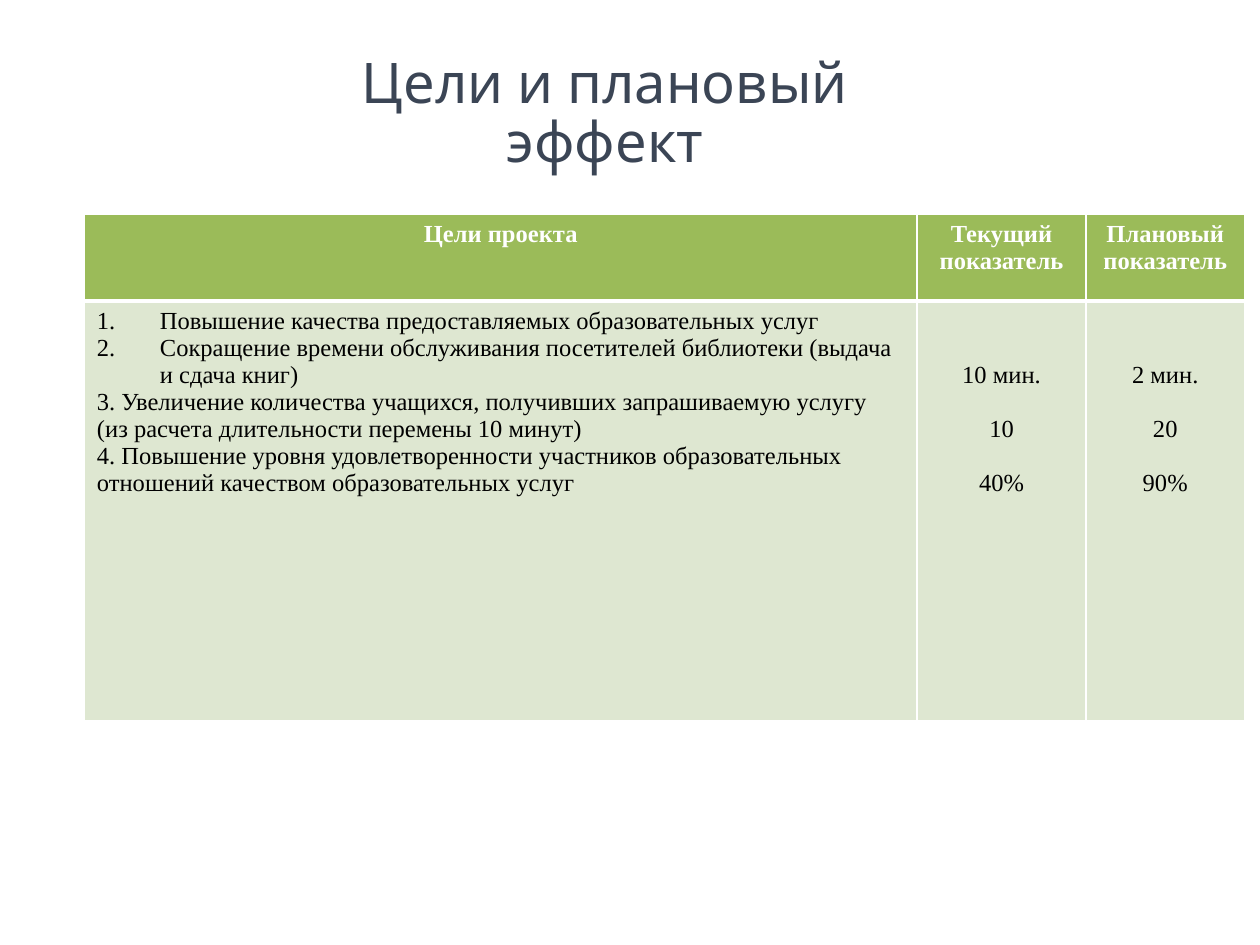
from lxml.etree import SubElement
from pptx import Presentation
from pptx.dml.color import RGBColor
from pptx.enum.text import MSO_ANCHOR, PP_ALIGN as AL
from pptx.oxml.ns import qn
from pptx.util import Cm, Pt

SERIF = "Times New Roman"
HEADERS = ["Цели проекта", "Текущий показатель", "Плановый показатель"]
NUMBERED = [
    "Повышение качества предоставляемых образовательных услуг",
    "Сокращение времени обслуживания посетителей библиотеки (выдача и сдача книг)",
]
GOALS = [
    "3. Увеличение количества учащихся, получивших запрашиваемую услугу "
    "(из расчета длительности перемены 10 минут)",
    "4. Повышение уровня удовлетворенности участников образовательных "
    "отношений качеством образовательных услуг",
]
INDICATORS = [["10 мин.", "10", "40%"], ["2 мин.", "20", "90%"]]
COLUMNS = [16.79, 3.4, 3.2]
ROWS = [1.75, 8.46]


def rgb(value):
    return RGBColor.from_string(value)


def add_text(tf, text, size=14, font=SERIF, color="000000", bold=False,
             align=AL.LEFT, before=0, spacing=None, numbered=False):
    p = tf.paragraphs[0]
    if p.runs:
        p = tf.add_paragraph()
    p.alignment = align
    if before:
        p.space_before = Pt(before)
    if spacing:
        p.line_spacing = spacing
    if numbered:
        pPr = p._p.get_or_add_pPr()
        pPr.set("marL", str(Cm(1.27)))
        pPr.set("indent", str(-Cm(1.27)))
        SubElement(pPr, qn("a:buFont"), typeface="+mj-lt")
        SubElement(pPr, qn("a:buAutoNum"), type="arabicPeriod")
    r = p.add_run()
    r.text = text
    r.font.size, r.font.name, r.font.bold = Pt(size), font, bold
    r.font.color.rgb = rgb(color)


def style_cell(cell, fill, top=1, bottom=1):
    tcPr = cell._tc.get_or_add_tcPr()
    for tag, width in (("lnL", 1), ("lnR", 1), ("lnT", top), ("lnB", bottom)):
        ln = SubElement(tcPr, qn(f"a:{tag}"), w=str(Pt(width)))
        SubElement(SubElement(ln, qn("a:solidFill")), qn("a:srgbClr"), val="FFFFFF")
    cell.fill.solid()
    cell.fill.fore_color.rgb = rgb(fill)


def add_title(s, text):
    tf = s.shapes.add_textbox(Cm(5.1), Cm(0.91), Cm(14.2), Cm(1.63)).text_frame
    tf.word_wrap = True
    tf.vertical_anchor = MSO_ANCHOR.TOP
    tf.margin_top = Cm(0.23)
    add_text(tf, text, size=32, font="League Spartan", color="3B4555",
             align=AL.CENTER, spacing=0.88)


def add_goals_table(s):
    table = s.shapes.add_table(len(ROWS), len(COLUMNS), Cm(1.7), Cm(4.32),
                               Cm(sum(COLUMNS)), Cm(sum(ROWS))).table
    for column, width in zip(table.columns, COLUMNS):
        column.width = Cm(width)
    for row, height in zip(table.rows, ROWS):
        row.height = Cm(height)
    for i, header in enumerate(HEADERS):
        style_cell(table.cell(0, i), "9BBB59", bottom=3)
        style_cell(table.cell(1, i), "DEE7D1", top=3)
        add_text(table.cell(0, i).text_frame, header, color="FFFFFF",
                 bold=True, align=AL.CENTER)
    goals = table.cell(1, 0).text_frame
    for text in NUMBERED:
        add_text(goals, text, numbered=True)
    for text in GOALS:
        add_text(goals, text)
    for i, values in enumerate(INDICATORS, 1):
        cell = table.cell(1, i)
        cell.margin_top = Cm(1.22)
        for n, value in enumerate(values):
            add_text(cell.text_frame, value, align=AL.CENTER,
                     before=15.5 if n else 0)


def main():
    """Build the slide with project goals and their planned effect."""
    prs = Presentation()
    prs.slide_width, prs.slide_height = Cm(25.4), Cm(19.05)
    s = prs.slides.add_slide(prs.slide_layouts[6])
    add_title(s, "Цели и плановый эффект")
    add_goals_table(s)
    prs.save("out.pptx")


if __name__ == "__main__":
    main()
